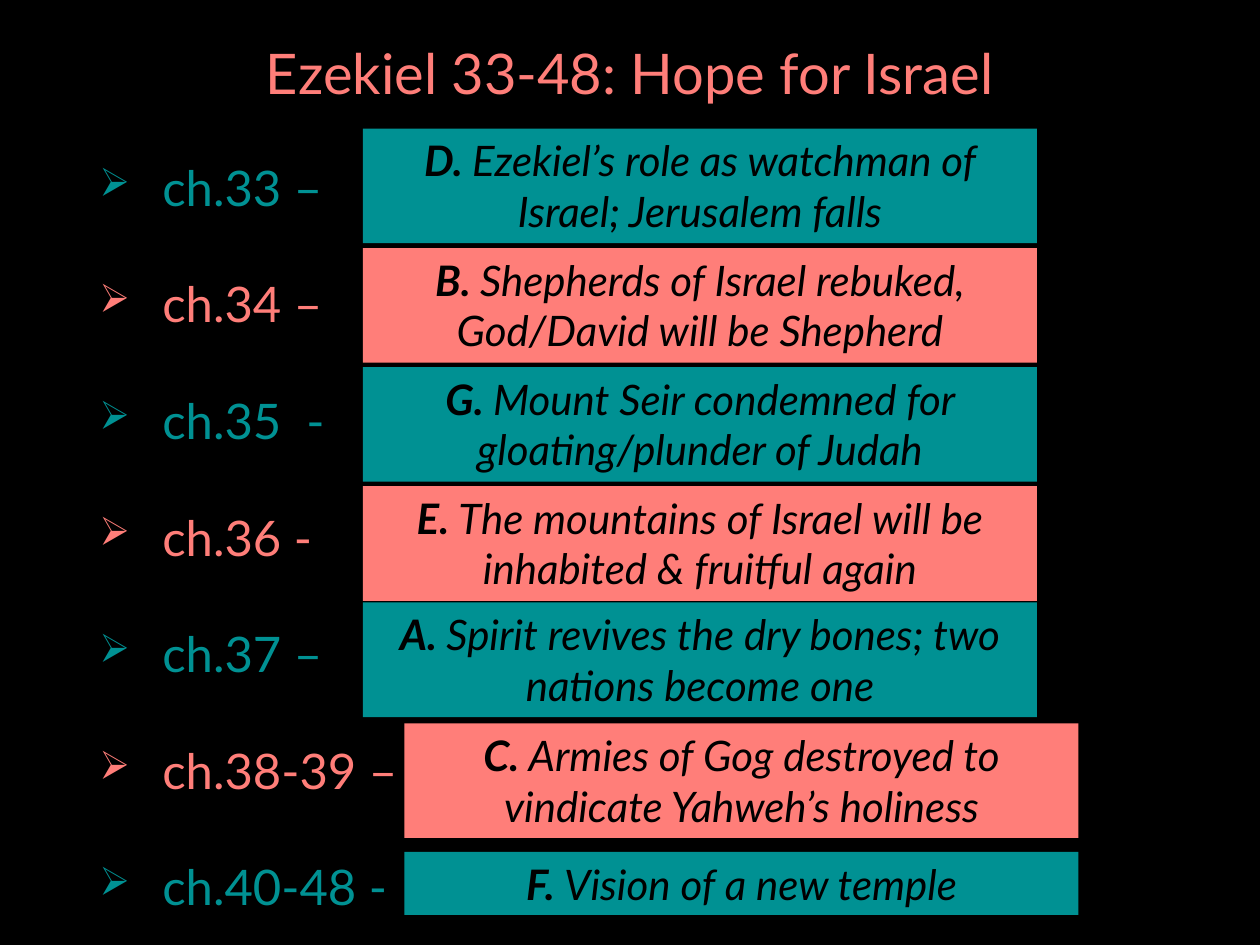
import dataclasses
import typing

import lxml.etree
import pptx
import pptx.dml.color
import pptx.enum.shapes
import pptx.enum.text
import pptx.oxml.ns
import pptx.util

RGB = pptx.dml.color.RGBColor
ALIGN = pptx.enum.text.PP_ALIGN
ANCHOR = pptx.enum.text.MSO_ANCHOR
FIT = pptx.enum.text.MSO_AUTO_SIZE

BLACK = RGB(0x00, 0x00, 0x00)
CORAL = RGB(0xFF, 0x7E, 0x79)
TEAL = RGB(0x00, 0x91, 0x93)
FONT = "Lato"
WIDTH = pptx.util.Inches(10)
HEIGHT = pptx.util.Inches(7.5)
COL = WIDTH / 100
ROW = HEIGHT / 100
INDENT = pptx.util.Inches(0.5)

NEAR, FAR = 28.8, 32.1
TALL, SHORT = 12.13, 6.67


@dataclasses.dataclass
class Box:
    left: float
    top: float
    width: float
    height: float

    def place(self) -> tuple[int, int, int, int]:
        return (round(self.left * COL), round(self.top * ROW),
                round(self.width * COL), round(self.height * ROW))


@dataclasses.dataclass
class Verse:
    label: str
    key: str
    text: str
    top: float
    left: float = NEAR
    height: float = TALL


VERSES = [
    Verse("ch.33 –", "D. ", "Ezekiel’s role as watchman of Israel; Jerusalem falls", 13.6),
    Verse("ch.34 –", "B. ", "Shepherds of Israel rebuked, God/David will be Shepherd", 26.25),
    Verse("ch.35  -", "G. ", "Mount Seir condemned for gloating/plunder of Judah", 38.85),
    Verse("ch.36 -", "E. ", "The mountains of Israel will be inhabited & fruitful again", 51.45),
    Verse("ch.37 –", "A. ", "Spirit revives the dry bones; two nations become one", 63.75),
    Verse("ch.38-39 –", "C. ", "Armies of Gog destroyed to vindicate Yahweh’s holiness", 76.55, FAR),
    Verse("ch.40-48 -", "F. ", "Vision of a new temple", 90.15, FAR, SHORT),
]


def write(para: typing.Any, text: str, *, size: float, color: RGB,
          bold: bool = False, italic: bool = False) -> None:
    run = para.add_run()
    run.text = text
    font = run.font
    font.name = FONT
    font.size = pptx.util.Pt(size)
    font.bold = bold
    font.italic = italic
    font.color.rgb = color


def bullet(para: typing.Any) -> None:
    props = para._p.get_or_add_pPr()
    props.set("marL", str(INDENT))
    props.set("indent", str(-INDENT))
    for tag, name, value in (("a:buSzPct", "val", "80000"), ("a:buChar", "char", "➢")):
        lxml.etree.SubElement(props, pptx.oxml.ns.qn(tag)).set(name, value)


def frame(slide: typing.Any, box: Box) -> typing.Any:
    text = slide.shapes.add_textbox(*box.place()).text_frame
    text.word_wrap = True
    return text


def title(slide: typing.Any) -> None:
    text = frame(slide, Box(6.9, 2.13, 86.2, 12))
    text.vertical_anchor = ANCHOR.MIDDLE
    para = text.paragraphs[0]
    para.alignment = ALIGN.CENTER
    para.line_spacing = 0.9
    write(para, "Ezekiel 33-48: Hope for Israel", size=32, color=CORAL)


def labels(slide: typing.Any, tones: list[RGB]) -> None:
    text = frame(slide, Box(6.9, 16, 86.2, 82.13))
    for row, (verse, tone) in enumerate(zip(VERSES, tones)):
        para = text.add_paragraph() if row else text.paragraphs[0]
        bullet(para)
        para.space_before = pptx.util.Pt(4 if row else 0)
        para.space_after = pptx.util.Pt(29)
        write(para, verse.label, size=28, color=tone)


def panel(slide: typing.Any, verse: Verse, tone: RGB) -> None:
    box = Box(verse.left, verse.top, 53.5, verse.height)
    kind = pptx.enum.shapes.MSO_SHAPE.RECTANGLE
    shape = slide.shapes.add_shape(kind, *box.place())
    shape.shadow.inherit = False
    shape.fill.solid()
    shape.fill.fore_color.rgb = tone
    shape.line.fill.background()
    text = shape.text_frame
    text.word_wrap = True
    text.auto_size = FIT.SHAPE_TO_FIT_TEXT
    text.vertical_anchor = ANCHOR.TOP
    para = text.paragraphs[0]
    para.alignment = ALIGN.CENTER
    write(para, verse.key, size=24, color=BLACK, bold=True, italic=True)
    write(para, verse.text, size=24, color=BLACK, italic=True)


def main() -> None:
    deck = pptx.Presentation()
    deck.slide_width = WIDTH
    deck.slide_height = HEIGHT
    slide = deck.slides.add_slide(deck.slide_layouts[6])
    slide.background.fill.solid()
    slide.background.fill.fore_color.rgb = BLACK
    tones = [CORAL if row % 2 else TEAL for row in range(len(VERSES))]
    title(slide)
    labels(slide, tones)
    for verse, tone in zip(VERSES, tones):
        panel(slide, verse, tone)
    deck.save("out.pptx")


if __name__ == "__main__":
    main()
